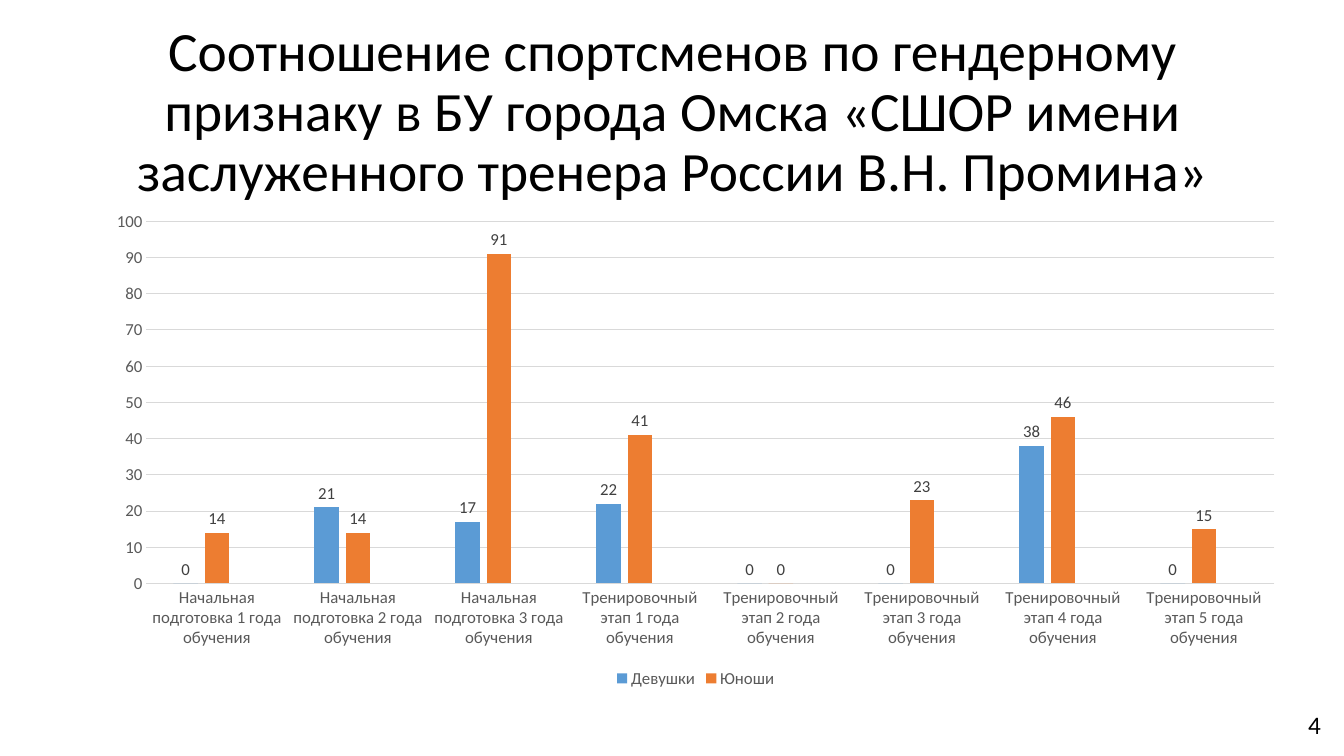
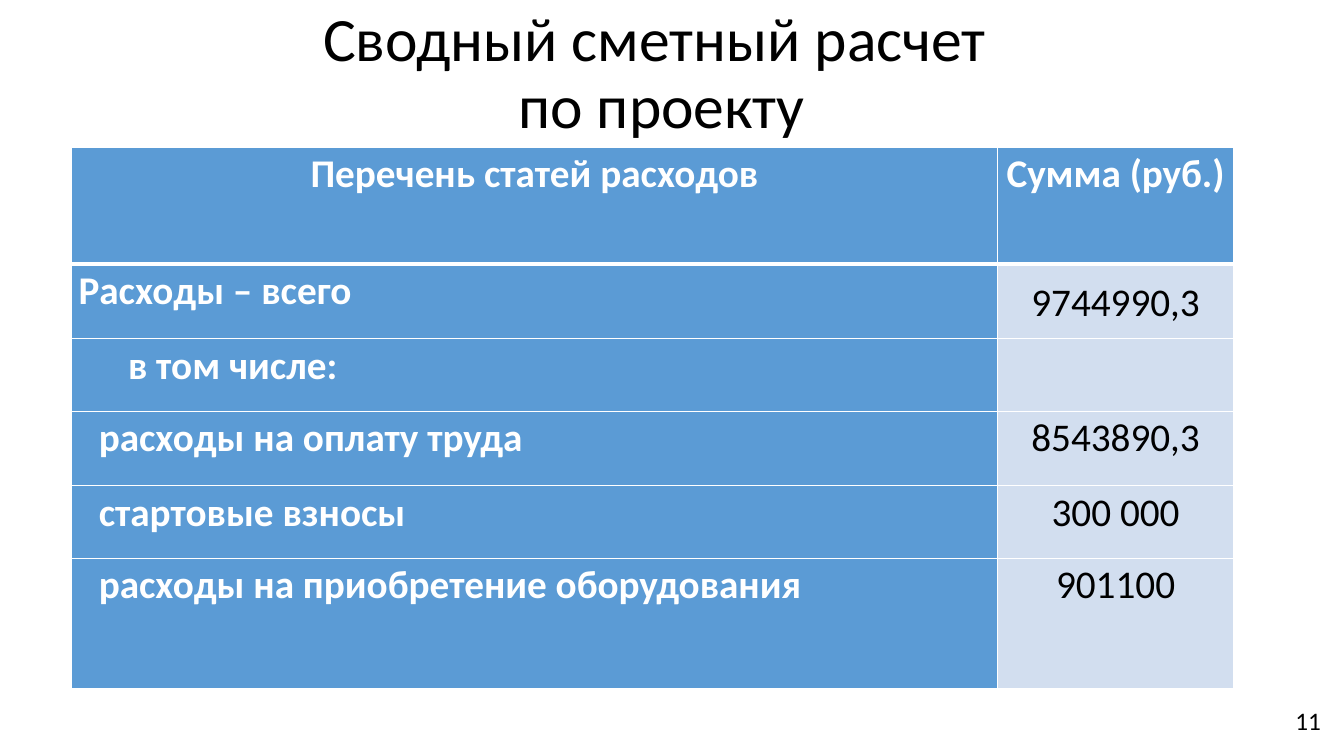
import pptx
import pptx.chart.data
import pptx.dml.color
import pptx.enum.chart
import pptx.enum.text
import pptx.oxml
import pptx.oxml.ns
import pptx.util

Inches = pptx.util.Inches
Pt = pptx.util.Pt
ALIGN = pptx.enum.text.PP_ALIGN
ANCHOR = pptx.enum.text.MSO_ANCHOR
FONT = "Calibri"
COLORS = {
    "text": "000000",
    "white": "FFFFFF",
    "blue": "5B9BD5",
    "orange": "ED7D31",
    "gray": "A5A5A5",
    "pale": "D2DEEF",
    "grid": "D9D9D9",
    "axis": "595959",
    "value": "404040",
}


def rgb(color):
    return pptx.dml.color.RGBColor.from_string(COLORS[color])


def style_font(font, size, color, bold=False):
    font.name = FONT
    font.size = Pt(size)
    font.bold = bold
    font.color.rgb = rgb(color)


def write_text(frame, text, size=18, color="text", bold=False, align=ALIGN.CENTER,
               anchor=ANCHOR.MIDDLE, spacing=1.0, after=0, indent=0):
    frame.word_wrap = True
    frame.vertical_anchor = anchor
    frame.text = text
    for paragraph in frame.paragraphs:
        paragraph.alignment = align
        paragraph.line_spacing = spacing
        paragraph.space_after = Pt(after)
        if indent:
            properties = paragraph._p.get_or_add_pPr()
            properties.set("marL", str(Inches(indent)))
            properties.set("indent", "0")
        for run in paragraph.runs:
            style_font(run.font, size, color, bold)


class Deck:
    def __init__(self):
        self.show = pptx.Presentation()
        self.show.slide_width = Inches(13.33)
        self.show.slide_height = Inches(7.5)
        self.slide = None

    def new_slide(self):
        self.slide = self.show.slides.add_slide(self.show.slide_layouts[6])

    def text(self, box, text, **style):
        frame = self.slide.shapes.add_textbox(*map(Inches, box)).text_frame
        write_text(frame, text, **style)

    def title(self, box, text, size):
        self.text(box, text, size=size, spacing=0.9)

    def page_number(self, number, top):
        self.text((10.2, top, 3, 0.4), str(number), align=ALIGN.RIGHT)

    def column_chart(self, box, categories, groups, hidden_legend):
        figures = pptx.chart.data.CategoryChartData()
        figures.categories = categories
        for name, values, _ in groups:
            figures.add_series(name, values)
        kind = pptx.enum.chart.XL_CHART_TYPE.COLUMN_CLUSTERED
        chart = self.slide.shapes.add_chart(kind, *map(Inches, box), figures).chart
        chart.has_title = False
        style_font(chart.font, 10, "text")
        plot = chart.plots[0]
        plot.gap_width = 219
        plot.overlap = -27
        plot.vary_by_categories = False
        for series, (_, values, color) in zip(plot.series, groups):
            series.invert_if_negative = False
            series.format.fill.solid()
            series.format.fill.fore_color.rgb = rgb(color)
            if any(values):
                labels = series.data_labels
                labels.show_value = True
                labels.position = pptx.enum.chart.XL_LABEL_POSITION.OUTSIDE_END
                style_font(labels.font, 12, "value")
        self.axes(chart)
        self.legend(chart, hidden_legend)

    def axes(self, chart):
        scale = chart.value_axis
        for axis in (chart.category_axis, scale):
            axis.major_tick_mark = pptx.enum.chart.XL_TICK_MARK.NONE
            axis.minor_tick_mark = pptx.enum.chart.XL_TICK_MARK.NONE
            style_font(axis.tick_labels.font, 12, "axis")
        scale.minimum_scale, scale.maximum_scale, scale.major_unit = 0, 100, 10
        scale.format.line.fill.background()
        scale.has_major_gridlines = True
        for line in (chart.category_axis.format.line, scale.major_gridlines.format.line):
            line.color.rgb = rgb("grid")
            line.width = Pt(0.75)

    def legend(self, chart, hidden):
        chart.has_legend = True
        chart.legend.position = pptx.enum.chart.XL_LEGEND_POSITION.BOTTOM
        chart.legend.include_in_layout = False
        style_font(chart.legend.font, 12, "axis")
        entry = pptx.oxml.parse_xml(
            f'<c:legendEntry {pptx.oxml.ns.nsdecls("c")}>'
            f'<c:idx val="{hidden}"/><c:delete val="1"/></c:legendEntry>')
        chart.legend._element.insert(1, entry)

    def table(self, box, widths, heights, rows):
        shape = self.slide.shapes.add_table(len(rows), len(widths), *map(Inches, box))
        grid = shape.table
        for column, width in zip(grid.columns, widths):
            column.width = Inches(width)
        for line, height in zip(grid.rows, heights):
            line.height = Inches(height)
        for r, row in enumerate(rows):
            for c, (text, style) in enumerate(row):
                strong = r == 0 or c == 0
                top, bottom = (3 if r == 1 else 1), (3 if r == 0 else 1)
                self.cell(grid.cell(r, c), text, strong, top, bottom, style)

    def cell(self, cell, text, strong, top, bottom, style):
        for side, width in zip("LRTB", (1, 1, top, bottom)):
            cell._tc.get_or_add_tcPr().append(pptx.oxml.parse_xml(
                f'<a:ln{side} {pptx.oxml.ns.nsdecls("a")} w="{Pt(width)}"><a:solidFill>'
                f'<a:srgbClr val="{COLORS["white"]}"/></a:solidFill></a:ln{side}>'))
        cell.fill.solid()
        cell.fill.fore_color.rgb = rgb("blue" if strong else "pale")
        cell.margin_left = cell.margin_right = Inches(0.07)
        cell.margin_top = cell.margin_bottom = 0
        look = {"size": 28, "color": "white" if strong else "text", "bold": strong,
                "spacing": 1.07, "after": 8, "anchor": ANCHOR.TOP}
        write_text(cell.text_frame, text, **{**look, **style})
        cell.vertical_anchor = style.get("anchor", ANCHOR.TOP)


def gender_slide(deck):
    deck.new_slide()
    deck.title((0.92, 0.4, 11.5, 1.45),
               "Соотношение спортсменов по гендерному признаку в БУ города Омска "
               "«СШОР имени заслуженного тренера России В.Н. Промина»", 39.6)
    stages = [f"Начальная подготовка {year} года обучения" for year in range(1, 4)]
    stages += [f"Тренировочный этап {year} года обучения" for year in range(1, 6)]
    groups = [
        ("Девушки", (0, 21, 17, 22, 0, 0, 38, 0), "blue"),
        ("Юноши", (14, 14, 91, 41, 0, 23, 46, 15), "orange"),
        ("Series 3", (None,) * len(stages), "gray"),
    ]
    deck.column_chart((0.92, 2, 11.96, 4.87), stages, groups, hidden_legend=2)
    deck.page_number(4, 6.99)


def budget_slide(deck):
    deck.new_slide()
    deck.page_number(11, 6.95)
    items = [
        ("Расходы – всего", 0, "9744990,3", ANCHOR.MIDDLE),
        ("в том числе:", 0.49, "", ANCHOR.TOP),
        ("расходы на оплату труда", 0.2, "8543890,3", ANCHOR.TOP),
        ("стартовые взносы", 0.2, "300 000", ANCHOR.TOP),
        ("расходы на приобретение оборудования", 0.2, "901100", ANCHOR.TOP),
    ]
    rows = [[("Перечень статей расходов", {}), ("Сумма (руб.)", {})]]
    rows += [[(item, {"align": ALIGN.JUSTIFY, "indent": indent}), (total, {"anchor": anchor})]
             for item, indent, total, anchor in items]
    deck.table((0.71, 1.46, 11.53, 5.36), (9.18, 2.35),
               (1.16, 0.74, 0.72, 0.74, 0.72, 1.29), rows)
    deck.title((0, 0, 13.13, 1.49), "Сводный сметный расчет \vпо проекту", 44)


def main():
    deck = Deck()
    gender_slide(deck)
    budget_slide(deck)
    deck.show.save("out.pptx")


if __name__ == "__main__":
    main()
